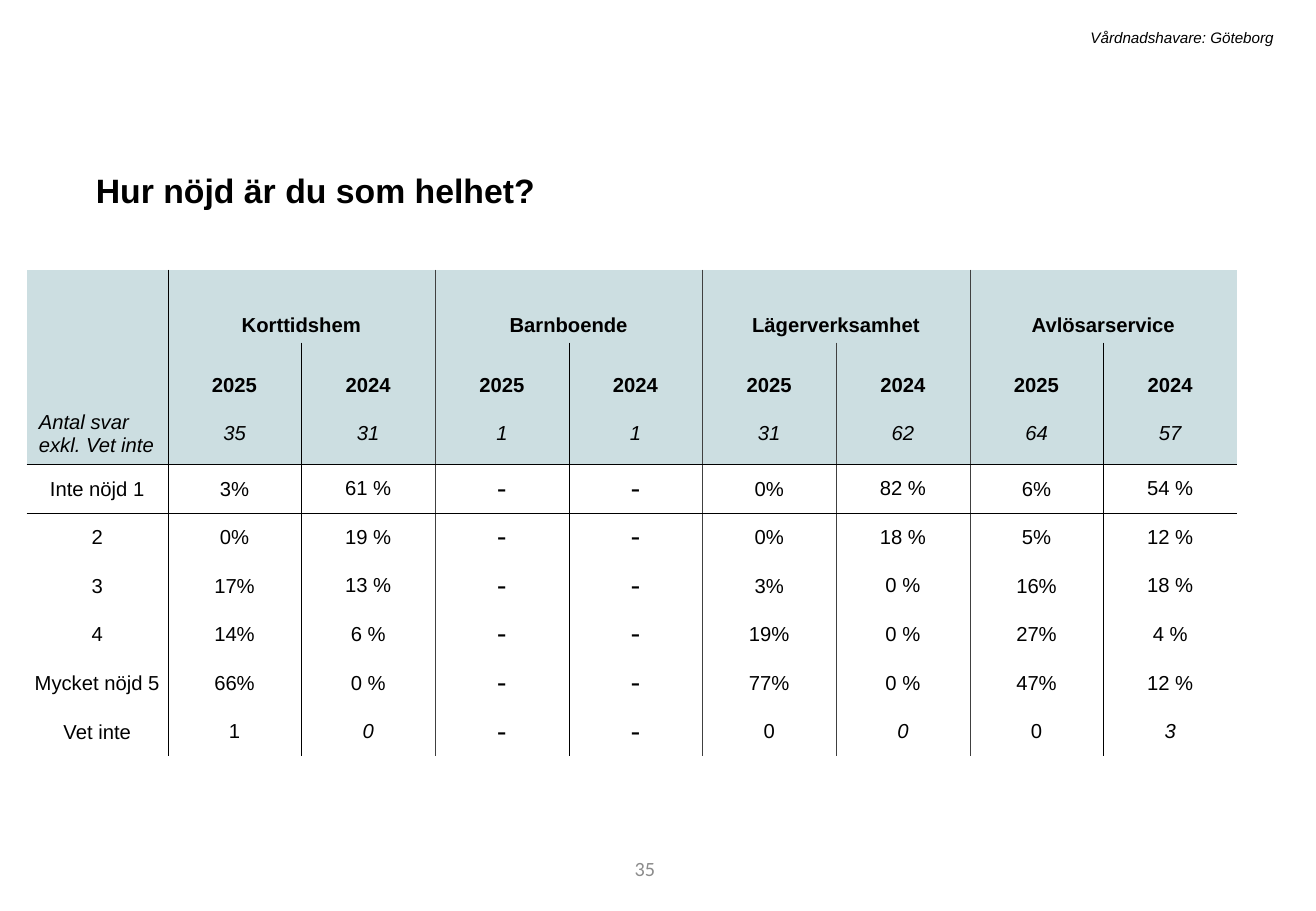
from lxml.etree import SubElement
from pptx import Presentation
from pptx.dml.color import RGBColor
from pptx.enum.text import MSO_ANCHOR, PP_ALIGN
from pptx.oxml import parse_xml
from pptx.oxml.ns import nsdecls, qn
from pptx.util import Inches, Pt

BLACK = RGBColor(0x00, 0x00, 0x00)
DARK_GREY = RGBColor(0x40, 0x40, 0x40)
PAGE_GREY = RGBColor(0x8C, 0x8C, 0x8C)
HEADER_BLUE = RGBColor(0xCC, 0xDE, 0xE1)
NO_GRID_STYLE = "{2D5ABB26-0587-4C30-8999-92F81FD0307C}"

SERVICES = ["Korttidshem", "Barnboende", "Lägerverksamhet", "Avlösarservice"]
YEARS = ["2025", "2024"]
ROWS = [
    [""] + [cell for service in SERVICES for cell in (service, "")],
    [""] + YEARS * len(SERVICES),
    ["Antal svar exkl. Vet inte", "35", "31", "1", "1", "31", "62", "64", "57"],
    ["Inte nöjd 1", "3%", "61 %", "-", "-", "0%", "82 %", "6%", "54 %"],
    ["2", "0%", "19 %", "-", "-", "0%", "18 %", "5%", "12 %"],
    ["3", "17%", "13 %", "-", "-", "3%", "0 %", "16%", "18 %"],
    ["4", "14%", "6 %", "-", "-", "19%", "0 %", "27%", "4 %"],
    ["Mycket nöjd 5", "66%", "0 %", "-", "-", "77%", "0 %", "47%", "12 %"],
    ["Vet inte", "1", "0", "-", "-", "0", "0", "0", "3"],
]
SERVICE_ROW, YEAR_ROW, COUNT_ROW, UNKNOWN_ROW = 0, 1, 2, len(ROWS) - 1
ROW_HEIGHTS = [0.6, 0.5, 0.5] + [0.4] * 6
COLUMN_WIDTHS = [1.16] + [1.1] * 8

# Vertical rule to the right of each column: colour and width in points
THIN_BLACK, THIN_GREY = (BLACK, 0.25), (DARK_GREY, 0.25)
RULES = [THIN_BLACK, THIN_BLACK, (DARK_GREY, 0.5), THIN_BLACK, THIN_GREY,
         None, THIN_GREY, THIN_BLACK, None]


def format_paragraph(paragraph, size, color=BLACK, font="Arial", bold=False,
                     italic=False, align=PP_ALIGN.LEFT):
    paragraph.alignment = align
    for run in paragraph.runs:
        run.font.size = Pt(size)
        run.font.name = font
        run.font.bold = bold
        run.font.italic = italic
        run.font.color.rgb = color


def add_line_of_text(slide, box, text, size, anchor=MSO_ANCHOR.TOP, **style):
    frame = slide.shapes.add_textbox(*map(Inches, box)).text_frame
    frame.word_wrap = True
    frame.vertical_anchor = anchor
    frame.text = text
    format_paragraph(frame.paragraphs[0], size, **style)
    return frame.paragraphs[0]


def set_borders(cell, borders):
    """Insert the cell's lines, which must come before its fill."""
    properties = cell._tc.get_or_add_tcPr()
    sides = [side for side in "LRTB" if borders.get(side)]
    for position, side in enumerate(sides):
        color, width = borders[side]
        line = parse_xml(f'<a:ln{side} {nsdecls("a")} w="{Pt(width)}"/>')
        fill = SubElement(line, qn("a:solidFill"))
        SubElement(fill, qn("a:srgbClr"), val=str(color))
        properties.insert(position, line)


def fill_cell(cell, text, row, column):
    is_header = row <= COUNT_ROW
    is_dash = text == "-"
    is_label = column == 0

    if is_header:
        cell.fill.solid()
        cell.fill.fore_color.rgb = HEADER_BLUE
    else:
        cell.fill.background()

    # Narrow margins for the answer labels and the 2025 shares
    if not is_header and (is_label or (text.endswith("%") and " " not in text)):
        cell.margin_left = cell.margin_right = cell.margin_top = Inches(0.01)
        cell.margin_bottom = 0

    cell.vertical_anchor = (MSO_ANCHOR.BOTTOM if row <= YEAR_ROW
                            else MSO_ANCHOR.MIDDLE)
    cell.text_frame.text = text
    is_2024 = column > 0 and column % 2 == 0
    format_paragraph(
        cell.text_frame.paragraphs[0],
        size=18 if is_dash else 12,
        font="Calibri" if is_dash else "Arial",
        bold=row <= YEAR_ROW,
        italic=row == COUNT_ROW or (row == UNKNOWN_ROW and is_2024
                                    and not is_dash),
        align=PP_ALIGN.LEFT if is_header and is_label else PP_ALIGN.CENTER)


def cell_borders(row, column):
    borders = {"L": RULES[column - 1] if column else None,
               "R": RULES[column]}
    if row == SERVICE_ROW and column:
        # A service heading spans two columns, with no rule between them
        if column % 2:
            borders["R"] = RULES[column + 1]
        else:
            borders["L"] = None
    if row == COUNT_ROW:
        borders["B"] = THIN_BLACK
    elif row == COUNT_ROW + 1:
        borders["T"] = THIN_BLACK
    return borders


def add_answer_table(slide, box):
    table = slide.shapes.add_table(
        len(ROWS), len(COLUMN_WIDTHS), *map(Inches, box)).table
    table.first_row = table.horz_banding = False
    table._tbl.tblPr.find(qn("a:tableStyleId")).text = NO_GRID_STYLE
    for column, width in zip(table.columns, COLUMN_WIDTHS):
        column.width = Inches(width)
    for row, height in zip(table.rows, ROW_HEIGHTS):
        row.height = Inches(height)

    for row, values in enumerate(ROWS):
        for column, text in enumerate(values):
            cell = table.cell(row, column)
            fill_cell(cell, text, row, column)
            set_borders(cell, cell_borders(row, column))

    # Service headings over their two years
    for column in range(1, len(COLUMN_WIDTHS), len(YEARS)):
        table.cell(SERVICE_ROW, column).merge(
            table.cell(SERVICE_ROW, column + 1))


def build_slide(presentation):
    slide = presentation.slides.add_slide(presentation.slide_layouts[6])

    # Page number
    add_line_of_text(slide, (3.05, 6.95, 2.44, 0.4), "35", 12,
                     anchor=MSO_ANCHOR.MIDDLE, color=PAGE_GREY,
                     font="Calibri", align=PP_ALIGN.RIGHT)

    # Question
    question = add_line_of_text(slide, (0.69, 1.28, 9.4, 0.47),
                                "Hur nöjd är du som helhet?", 20, bold=True)
    question.line_spacing = 1.2
    question.space_before = Pt(10)

    # Respondent group
    add_line_of_text(slide, (1.72, 0.18, 8.86, 0.25),
                     "Vårdnadshavare: Göteborg", 9, italic=True,
                     align=PP_ALIGN.RIGHT)

    # Answers by service and year
    add_answer_table(slide, (0.22, 2.22, sum(COLUMN_WIDTHS), sum(ROW_HEIGHTS)))


def main():
    presentation = Presentation()
    presentation.slide_width = Inches(10.83)
    presentation.slide_height = Inches(7.5)
    build_slide(presentation)
    presentation.save("out.pptx")


if __name__ == "__main__":
    main()
